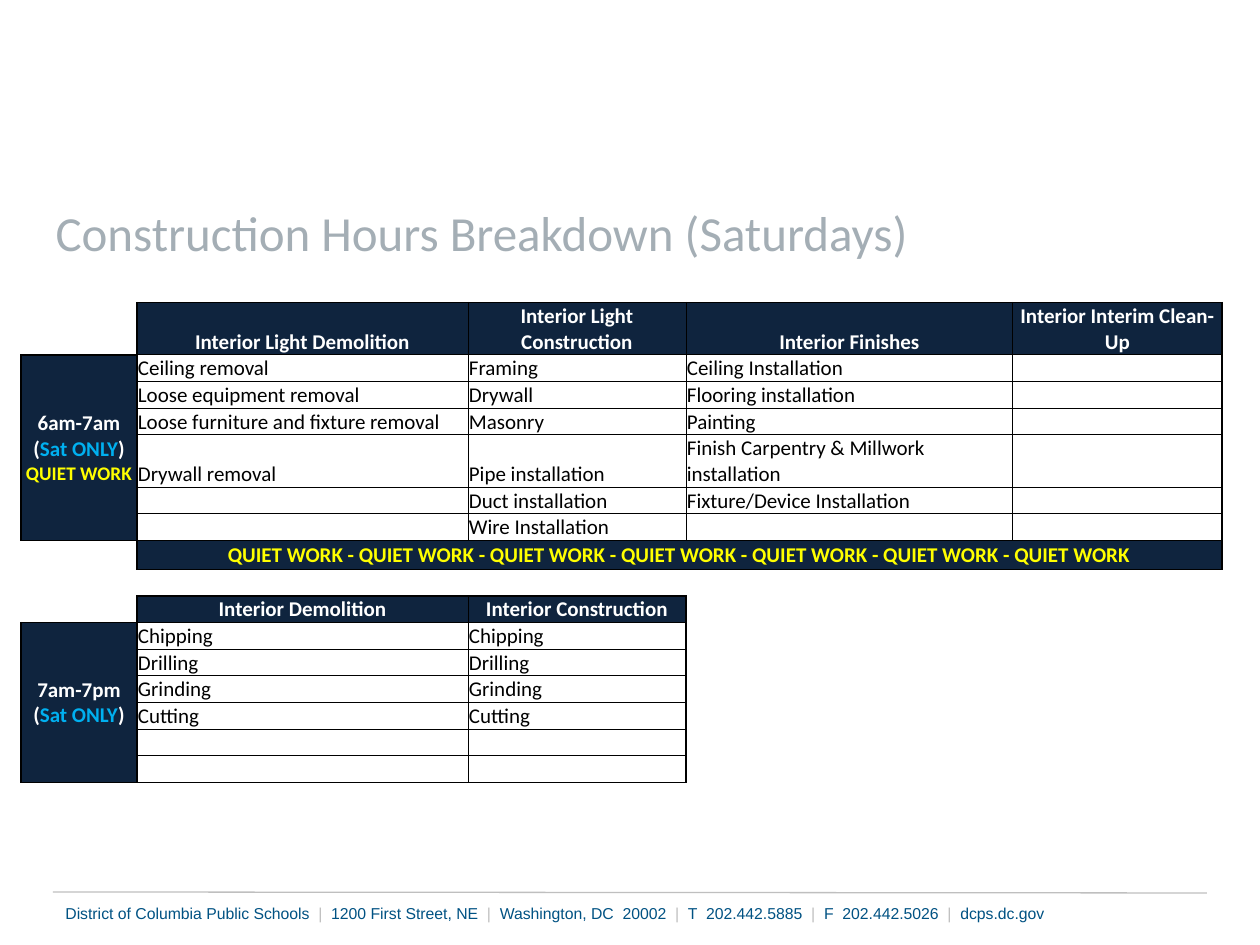
import pptx
import pptx.util
import pptx.dml.color
import pptx.enum.shapes
import pptx.enum.text
import pptx.oxml
import pptx.oxml.ns

PX = 914400 // 126  # EMU in one px
ALIGN = pptx.enum.text.PP_ALIGN
ANCHOR = pptx.enum.text.MSO_ANCHOR

THEME = {
    "navy": "0F243E", "white": "FFFFFF", "black": "000000", "rule": "BFBFBF",
    "thick": 1, "thin": 0.5,
    # text styles: font, size, bold, colour
    "title": ("Calibri", 28, False, "A4AEB5"),
    "head": ("Calibri", 12, True, "FFFFFF"),
    "body": ("Calibri", 12, False, "000000"),
    "day": ("Calibri", 12, True, "00B0F0"),
    "quiet": ("Calibri", 12, True, "FFFF00"),
    "quiet_small": ("Calibri", 11, True, "FFFF00"),
    "footer": ("Arial", 9, False, "005283"),
    "bar": ("Arial", 9, False, "BFBFBF"),
}


def write(p, runs):
    for text, style in runs:
        r = p.add_run()
        r.text = text
        name, size, bold, colour = THEME[style]
        values = {"name": name, "size": pptx.util.Pt(size), "bold": bold}
        for key, value in values.items():
            setattr(r.font, key, value)
        r.font.color.rgb = pptx.dml.color.RGBColor.from_string(colour)


def format_cell(cell, runs, fill, edges, align=ALIGN.LEFT, anchor=ANCHOR.BOTTOM):
    """Fill one cell; edges holds the line widths left, right, top, bottom."""
    values = {"margin_left": PX, "margin_right": PX, "margin_top": PX,
              "margin_bottom": 0, "vertical_anchor": anchor}
    for key, value in values.items():
        setattr(cell, key, value)
    p = cell.text_frame.paragraphs[0]
    p.alignment = align
    write(p, runs)
    if not runs:
        p._p.get_or_add_endParaRPr().set("sz", str(THEME["body"][1] * 100))
    if fill:
        cell.fill.solid()
        cell.fill.fore_color.rgb = pptx.dml.color.RGBColor.from_string(THEME[fill])
    else:
        cell.fill.background()
    tcPr = cell._tc.get_or_add_tcPr()
    for i, (side, edge) in enumerate(zip("LRTB", edges)):
        width = pptx.util.Pt(THEME[edge])
        tcPr.insert(i, pptx.oxml.parse_xml(
            f'<a:ln{side} {pptx.oxml.ns.nsdecls("a")} w="{width}"><a:solidFill>'
            f'<a:srgbClr val="{THEME["black"]}"/></a:solidFill></a:ln{side}>'))


prs = pptx.Presentation()
prs.slide_width, prs.slide_height = 1260 * PX, 945 * PX
s = prs.slides.add_slide(prs.slide_layouts[5])

# Title
sp = s.shapes.title
sp.left, sp.top, sp.width, sp.height = 43 * PX, 215 * PX, 1155 * PX, 53 * PX
tf = sp.text_frame
tf.auto_size = pptx.enum.text.MSO_AUTO_SIZE.NONE
tf.vertical_anchor = ANCHOR.BOTTOM
tf.paragraphs[0].alignment = ALIGN.LEFT
write(tf.paragraphs[0], [("Construction Hours Breakdown (Saturdays)", "title")])

# Two blocks of working hours: first row, label, header and tasks, banner
blocks = [
    (1, [("6am-7am (", "head"), ("Sat ONLY", "day"), (") ", "head"),
         ("QUIET WORK", "quiet_small")],
     [["Interior Light Demolition", "Interior Light Construction",
       "Interior Finishes", "Interior Interim Clean-Up"],
      ["Ceiling removal", "Framing", "Ceiling Installation", ""],
      ["Loose equipment removal", "Drywall", "Flooring installation", ""],
      ["Loose furniture and fixture removal", "Masonry", "Painting", ""],
      ["Drywall removal", "Pipe installation",
       "Finish Carpentry & Millwork installation", ""],
      ["", "Duct installation", "Fixture/Device Installation", ""],
      ["", "Wire Installation", "", ""]],
     " - ".join(["QUIET WORK"] * 7)),
    (10, [("7am-7pm (", "head"), ("Sat ONLY", "day"), (")", "head")],
     [["Interior Demolition", "Interior Construction"]]
     + [[task, task] for task in ["Chipping", "Drilling", "Grinding", "Cutting", "", ""]],
     None),
]

# Table grid
col_widths = [116, 331, 218, 327, 209, 80]
row_count, banner_row = 18, 8
frame = s.shapes.add_table(row_count, len(col_widths), 21 * PX, 276 * PX,
                           sum(col_widths) * PX, 525 * PX)
table = frame.table
table.first_row = table.horz_banding = False
table._tbl.tblPr[0].text = "{2D5ABB26-0587-4C30-8999-92F81FD0307C}"  # no style, no grid
for col, width in zip(table.columns, col_widths):
    col.width = width * PX
for i, row in enumerate(table.rows):
    row.height = (29 if i == banner_row else 25) * PX
frame.height = 525 * PX

# Table contents
boxed = ["thick"] * 4
used = set()
for top, label, grid, banner in blocks:
    last_row, last_col = len(grid) - 1, len(grid[0]) - 1
    for i, texts in enumerate(grid):
        for j, text in enumerate(texts):
            outer = [j == 0, j == last_col, i == 0, i == last_row]
            edges = ["thick" if o else "thin" for o in outer]
            style, fill, align = (("head", "navy", ALIGN.CENTER) if i == 0
                                  else ("body", "white", ALIGN.LEFT))
            format_cell(table.cell(top + i, j + 1), [(text, style)] if text else [],
                        fill, edges, align)
            used.add((top + i, j + 1))

    # Merged cells: the hours at the left and the banner below
    merges = [([(top + i, 0) for i in range(1, len(grid))], label)]
    if banner:
        merges.append(([(banner_row, j + 1) for j in range(last_col + 1)],
                       [(banner, "quiet")]))
    for places, runs in merges:
        for n, place in enumerate(places):
            format_cell(table.cell(*place), [] if n else runs, "navy", boxed,
                        ALIGN.CENTER, ANCHOR.MIDDLE)
        table.cell(*places[0]).merge(table.cell(*places[-1]))
        used.update(places)

# Empty cells around the blocks
for i in range(row_count):
    for j in range(len(col_widths)):
        if (i, j) not in used:
            format_cell(table.cell(i, j), [], None, [])

# Footer rule
line = s.shapes.add_connector(pptx.enum.shapes.MSO_CONNECTOR.STRAIGHT,
                              53 * PX, 892 * PX, 1207 * PX, 893 * PX)
line.line.width = pptx.util.Pt(0.75)
line.line.color.rgb = pptx.dml.color.RGBColor.from_string(THEME["rule"])
line._element.spPr.append(
    pptx.oxml.parse_xml(f'<a:effectLst {pptx.oxml.ns.nsdecls("a")}/>'))

# Footer address
sp = s.shapes.add_textbox(53 * PX, 897 * PX, 1155 * PX, 32 * PX)
tf = sp.text_frame
tf.word_wrap = True
tf.vertical_anchor = ANCHOR.MIDDLE
p = tf.paragraphs[0]
p.alignment = ALIGN.JUSTIFY
parts = ["District of Columbia Public Schools", "1200 First Street, NE",
         "Washington, DC  20002", "T  202.442.5885", "F  202.442.5026", "dcps.dc.gov"]
for i, part in enumerate(parts):
    write(p, ([("  |  ", "bar")] if i else []) + [(part, "footer")])

prs.save("out.pptx")
